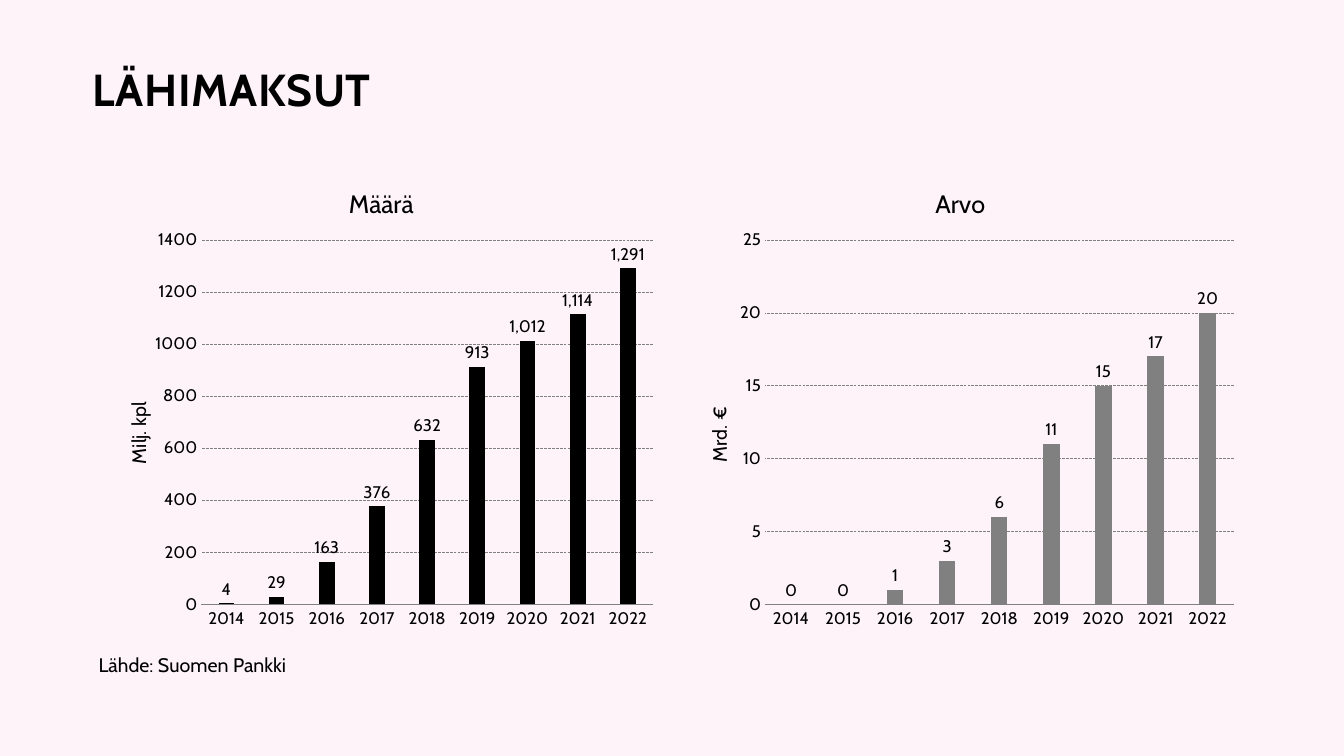
from lxml import etree
from pptx import Presentation
from pptx.chart.data import CategoryChartData
from pptx.dml.color import RGBColor
from pptx.enum import chart as ch, dml, text
from pptx.oxml import parse_xml
from pptx.oxml.ns import nsdecls
from pptx.util import Inches, Pt

FONT = "Cabin"
INK, GREY, PAPER = "000000", "808080", "FEF3F9"
YEARS = [str(y) for y in range(2014, 2023)]
CHART_TOP, CHART_W, CHART_H = 1.57, 5.67, 4.76
CHARTS = [
    dict(title="Määrä", unit="Milj. kpl", left=0.92, color=INK, top=1400, step=200,
         values=[4, 29, 163, 376, 632, 913, 1012, 1114, 1291],
         title_at=(0.44, 0.05), unit_at=(0.05, 0.5), plot=(0.19, 0.17, 0.79, 0.76)),
    dict(title="Arvo", unit="Mrd. €", left=6.68, color=GREY, top=25, step=5,
         values=[0, 0, 1, 3, 6, 11, 15, 17, 20],
         title_at=(0.45, 0.05), unit_at=(0.05, 0.51), plot=(0.16, 0.17, 0.82, 0.76)),
]
TEXTS = [
    ("LÄHIMAKSUT", (0.82, 0.19, 11.5, 1.45), 32, True, text.MSO_ANCHOR.MIDDLE),
    ("Lähde: Suomen Pankki", (0.88, 6.43, 5.22, 0.34), 14, False, text.MSO_ANCHOR.TOP),
]


def rgb(color):
    return RGBColor.from_string(color)


def style(font, size, bold=False):
    font.name, font.size, font.bold = FONT, Pt(size), bold
    font.color.rgb = rgb(INK)


def set_layout(parent, box, inner=False):
    for old in parent.findall("{*}layout"):
        parent.remove(old)
    target = '<c:layoutTarget val="inner"/>' if inner else ""
    modes = "".join(f'<c:{k}Mode val="edge"/>' for k in "xy")
    sizes = "".join(f'<c:{k} val="{v}"/>' for k, v in zip("xywh", box))
    layout = parse_xml(f'<c:layout {nsdecls("c")}><c:manualLayout>{target}{modes}{sizes}'
                       '</c:manualLayout></c:layout>')
    tx = parent.find("{*}tx")
    if tx is None:
        parent.insert(0, layout)
    else:
        tx.addnext(layout)


def set_title(owner, words, size, at):
    owner.has_title = True
    title = owner.chart_title if hasattr(owner, "chart_title") else owner.axis_title
    p = title.text_frame.paragraphs[0]
    p.text = words
    style(p.runs[0].font, size)
    set_layout(title._element, at)
    return title


def add_column_chart(s, c):
    data = CategoryChartData(number_format="#,##0")
    data.categories = YEARS
    data.add_series("Series 1", c["values"])
    box = [Inches(v) for v in (c["left"], CHART_TOP, CHART_W, CHART_H)]
    chart = s.shapes.add_chart(ch.XL_CHART_TYPE.COLUMN_CLUSTERED, *box, data).chart
    style(chart.font, 10)
    chart.has_legend = False
    set_title(chart, c["title"], 18, c["title_at"])
    set_layout(chart._chartSpace.chart.plotArea, c["plot"], inner=True)

    cat, val = chart.category_axis, chart.value_axis
    for axis in (cat, val):
        axis.major_tick_mark = axis.minor_tick_mark = ch.XL_TICK_MARK.NONE
        style(axis.tick_labels.font, 12)
    cat.format.line.color.rgb = rgb(GREY)
    cat.format.line.width = Pt(0.75)

    val.minimum_scale, val.maximum_scale, val.major_unit = 0, c["top"], c["step"]
    val.tick_labels.number_format = "0"
    val.tick_labels.number_format_is_linked = False
    val.format.line.fill.background()
    unit = set_title(val, c["unit"], 14, c["unit_at"])
    body = unit.text_frame._txBody.bodyPr
    body.set("rot", "-5400000")
    body.set("vert", "horz")
    grid = val.major_gridlines.format.line
    grid.color.rgb = rgb(GREY)
    grid.width = Pt(0.25)
    grid.dash_style = dml.MSO_LINE.LONG_DASH

    plot = chart.plots[0]
    plot.gap_width, plot.vary_by_categories = 219, False
    fill = plot.series[0].format.fill
    fill.solid()
    fill.fore_color.rgb = rgb(c["color"])
    labels = plot.series[0].data_labels
    labels.show_value = True
    labels.number_format, labels.number_format_is_linked = "#,##0", False
    labels.position = ch.XL_LABEL_POSITION.OUTSIDE_END
    style(labels.font, 12)


def add_text(s, words, box, size, bold, anchor):
    tf = s.shapes.add_textbox(*[Inches(v) for v in box]).text_frame
    tf.word_wrap = True
    tf.vertical_anchor = anchor
    p = tf.paragraphs[0]
    p.text = words
    style(p.runs[0].font, size, bold)
    if bold:
        p.line_spacing = 0.9
        p.runs[0]._r.get_or_add_rPr().set("spc", "50")


prs = Presentation()
prs.slide_width, prs.slide_height = Inches(13.33), Inches(7.5)
s = prs.slides.add_slide(prs.slide_layouts[6])
s.background.fill.solid()
s.background.fill.fore_color.rgb = rgb(PAPER)
for c in CHARTS:
    add_column_chart(s, c)
for item in TEXTS:
    add_text(s, *item)
prs.save("out.pptx")
